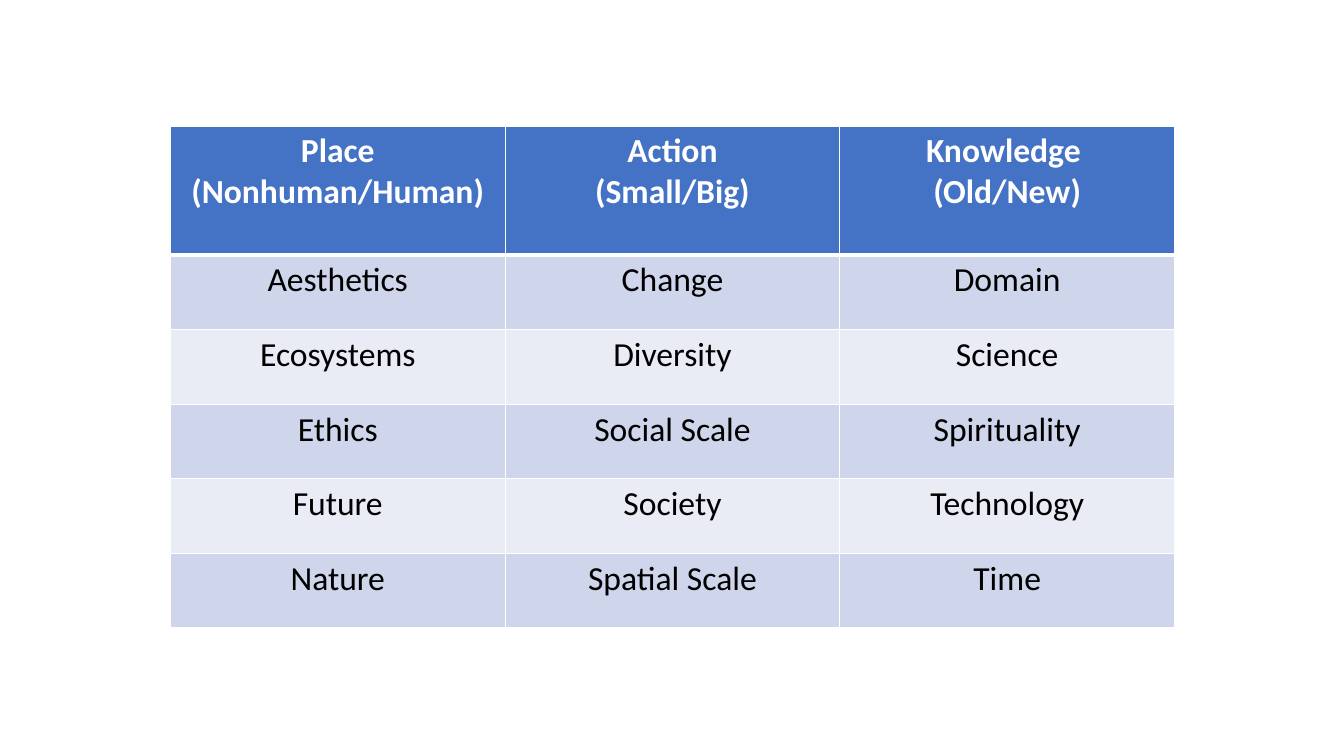
from lxml.etree import SubElement
from pptx import Presentation
from pptx.dml.color import RGBColor
from pptx.enum.text import PP_ALIGN
from pptx.oxml.ns import qn
from pptx.util import Inches, Pt

HEADERS = ["Place\v(Nonhuman/Human)", "Action\v(Small/Big)", "Knowledge \v(Old/New)"]
CONCEPTS = [
    ("Aesthetics", "Change", "Domain"),
    ("Ecosystems", "Diversity", "Science"),
    ("Ethics", "Social Scale", "Spirituality"),
    ("Future", "Society", "Technology"),
    ("Nature", "Spatial Scale", "Time"),
]
THEME = {
    "font": "Calibri",
    "size": 24,
    "header_fill": "4472C4",
    "header_text": "FFFFFF",
    "band_fills": ("CFD5EA", "E9EBF5"),
    "body_text": "000000",
    "border": "FFFFFF",
    "thin": 1,
    "thick": 3,
}
LEFT, TOP = 1.69, 1.25
COLUMN_WIDTH = 3.32
HEADER_HEIGHT, ROW_HEIGHT = 1.28, 0.74


def add_border(cell, side, width):
    properties = cell._tc.get_or_add_tcPr()
    line = SubElement(properties, qn(f"a:ln{side}"), w=str(Pt(width)))
    fill = SubElement(line, qn("a:solidFill"))
    SubElement(fill, qn("a:srgbClr"), val=THEME["border"])


def style_cell(cell, text, row_index):
    is_header = row_index == 0
    for side in "LRTB":
        meets_header_rule = (is_header and side == "B") or (row_index == 1 and side == "T")
        add_border(cell, side, THEME["thick" if meets_header_rule else "thin"])
    fill_color = THEME["header_fill"] if is_header else THEME["band_fills"][(row_index - 1) % 2]
    cell.fill.solid()
    cell.fill.fore_color.rgb = RGBColor.from_string(fill_color)
    cell.text = text
    paragraph = cell.text_frame.paragraphs[0]
    paragraph.alignment = PP_ALIGN.CENTER
    paragraph.font.name = THEME["font"]
    paragraph.font.size = Pt(THEME["size"])
    paragraph.font.bold = is_header
    paragraph.font.color.rgb = RGBColor.from_string(THEME["header_text" if is_header else "body_text"])


def main():
    presentation = Presentation()
    presentation.slide_width = Inches(13.33)
    presentation.slide_height = Inches(7.5)
    slide = presentation.slides.add_slide(presentation.slide_layouts[6])

    rows = [HEADERS, *CONCEPTS]
    heights = [HEADER_HEIGHT] + [ROW_HEIGHT] * len(CONCEPTS)
    table = slide.shapes.add_table(
        len(rows), len(HEADERS), Inches(LEFT), Inches(TOP),
        Inches(COLUMN_WIDTH * len(HEADERS)), Inches(sum(heights)),
    ).table
    for column in table.columns:
        column.width = Inches(COLUMN_WIDTH)
    for row_index, (texts, height) in enumerate(zip(rows, heights)):
        table.rows[row_index].height = Inches(height)
        for column_index, text in enumerate(texts):
            style_cell(table.cell(row_index, column_index), text, row_index)
    presentation.save("out.pptx")


if __name__ == "__main__":
    main()
